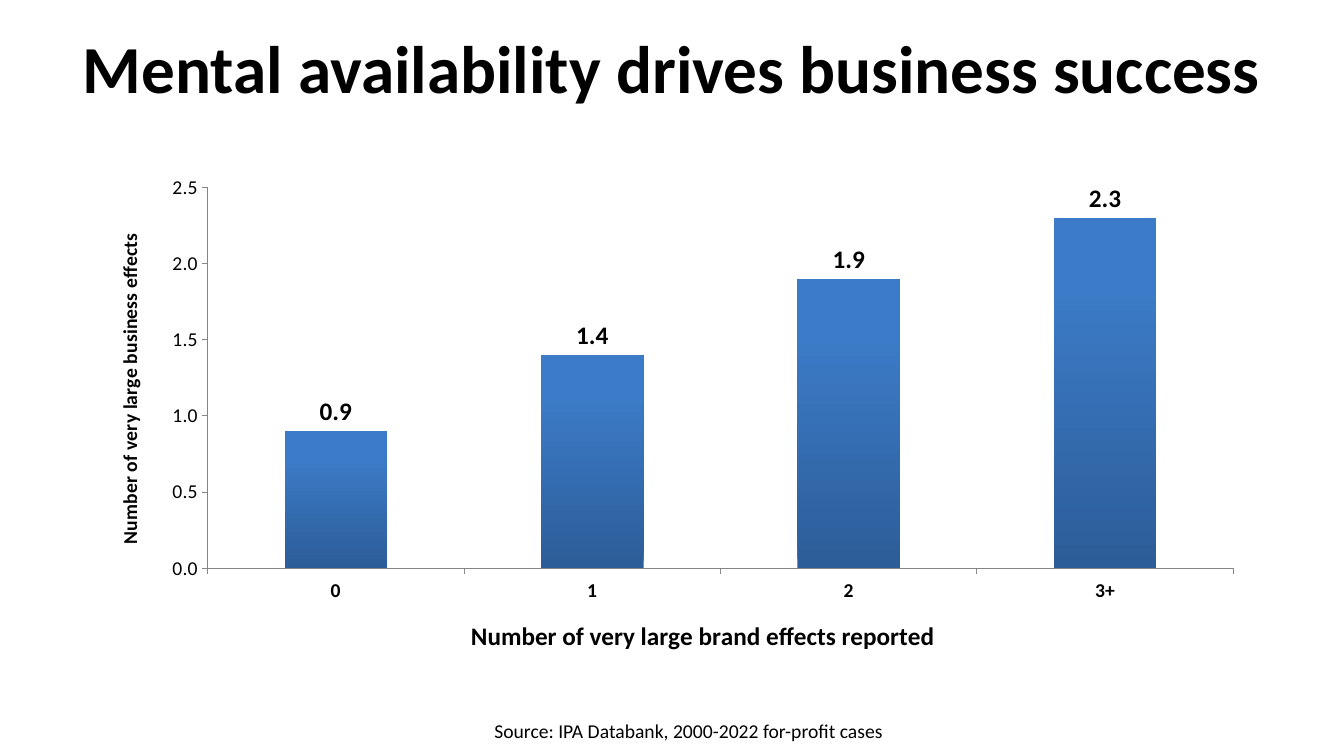
from lxml import etree
from pptx import Presentation
from pptx import util as u
from pptx.chart import data as cd
from pptx.dml.color import RGBColor
from pptx.enum import chart as ch, text
from pptx.oxml import ns

BLACK = RGBColor(0x00, 0x00, 0x00)
AXIS_GREY = RGBColor(0x86, 0x86, 0x86)
BAR_DARK = RGBColor(0x2C, 0x5D, 0x98)
BAR_LIGHT = RGBColor(0x3C, 0x7B, 0xC7)
WIDTH, HEIGHT = 13.33, 7.5


def style_font(font, size=18, bold=False, color=BLACK, name="Calibri"):
    font.size, font.bold, font.name = u.Pt(size), bold, name
    font.color.rgb = color


def write(tf, words, align=text.PP_ALIGN.CENTER, anchor=None, **fmt):
    tf.word_wrap = True
    if anchor is not None:
        tf.vertical_anchor = anchor
    p = tf.paragraphs[0]
    p.alignment = align
    r = p.add_run()
    r.text = words
    style_font(r.font, **fmt)


class SlideBuilder:
    """Holds the slide; boxes are shares of its width and height."""

    def __init__(self, prs):
        self.prs = prs
        self.s = prs.slides.add_slide(prs.slide_layouts[5])

    def box(self, x, y, w, h):
        pw, ph = self.prs.slide_width, self.prs.slide_height
        return int(x * pw), int(y * ph), int(w * pw), int(h * ph)

    def title(self, words, share, **fmt):
        sp = self.s.shapes.title
        sp.left, sp.top, sp.width, sp.height = self.box(*share)
        write(sp.text_frame, words, anchor=text.MSO_ANCHOR.MIDDLE, **fmt)

    def note(self, words, share, **fmt):
        sp = self.s.shapes.add_textbox(*self.box(*share))
        write(sp.text_frame, words, **fmt)

    def axis(self, axis, words, title_size, bold=False):
        axis.has_major_gridlines = False
        axis.major_tick_mark = ch.XL_TICK_MARK.OUTSIDE
        axis.minor_tick_mark = ch.XL_TICK_MARK.NONE
        axis.format.line.color.rgb = AXIS_GREY
        axis.format.line.width = u.Pt(0.75)
        style_font(axis.tick_labels.font, 14, bold)
        r = axis.axis_title.text_frame.paragraphs[0].add_run()
        r.text = words
        style_font(r.font, title_size, True)

    def plot_area(self, chart, **place):
        area = chart.plots[0]._element.getparent()
        for old in area.findall(ns.qn("c:layout")):
            area.remove(old)
        layout = etree.Element(ns.qn("c:layout"))
        manual = etree.SubElement(layout, ns.qn("c:manualLayout"))
        settings = dict(layoutTarget="inner", xMode="edge", yMode="edge", **place)
        for tag, val in settings.items():
            etree.SubElement(manual, ns.qn("c:" + tag)).set("val", str(val))
        area.insert(0, layout)

    def columns(self, cats, vals, share, cat_title, val_title):
        data = cd.CategoryChartData(number_format="0.0")
        data.categories = cats
        data.add_series("Series 1", vals)
        chart = self.s.shapes.add_chart(
            ch.XL_CHART_TYPE.COLUMN_CLUSTERED, *self.box(*share), data).chart
        style_font(chart.font)
        chart.has_legend = chart.has_title = False
        self.plot_area(chart, x=0.115, y=0.06, w=0.848, h=0.705)

        # Axes
        self.axis(chart.category_axis, cat_title, 18, bold=True)
        val_axis = chart.value_axis
        self.axis(val_axis, val_title, 14)
        val_axis.minimum_scale, val_axis.maximum_scale = 0, 2.5
        val_axis.major_unit = 0.5
        val_axis.tick_labels.number_format = "0.0"
        val_axis.tick_labels.number_format_is_linked = False
        body = val_axis.axis_title.text_frame._txBody.find(ns.qn("a:bodyPr"))
        body.set("rot", "-5400000")
        body.set("vert", "horz")

        # Bars and their labels
        plot = chart.plots[0]
        plot.gap_width, plot.vary_by_categories = 150, False
        fill = plot.series[0].format.fill
        fill.gradient()
        fill.gradient_angle = 90
        for stop, color, pos in zip(fill.gradient_stops, (BAR_DARK, BAR_LIGHT), (0, 0.8)):
            stop.color.rgb, stop.position = color, pos
        labels = plot.series[0].data_labels
        labels.show_value = True
        labels.position = ch.XL_LABEL_POSITION.OUTSIDE_END
        labels.number_format, labels.number_format_is_linked = "0.0", False
        style_font(labels.font, bold=True)


def main():
    prs = Presentation()
    prs.slide_width, prs.slide_height = u.Inches(WIDTH), u.Inches(HEIGHT)
    slide = SlideBuilder(prs)

    # Heading
    slide.title("Mental availability drives business success",
                (0.05, 0.005, 0.9, 0.167), size=48, bold=True)
    # Business effects by number of brand effects
    slide.columns(("0", "1", "2", "3+"), (0.9, 1.4, 1.9, 2.3),
                  (0.051, 0.205, 0.9, 0.715),
                  "Number of very large brand effects reported",
                  "Number of very large business effects")
    # Source
    slide.note("Source: IPA Databank, 2000-2022 for-profit cases",
               (0.321, 0.945, 0.383, 0.045), size=14)

    prs.save("out.pptx")


if __name__ == "__main__":
    main()
